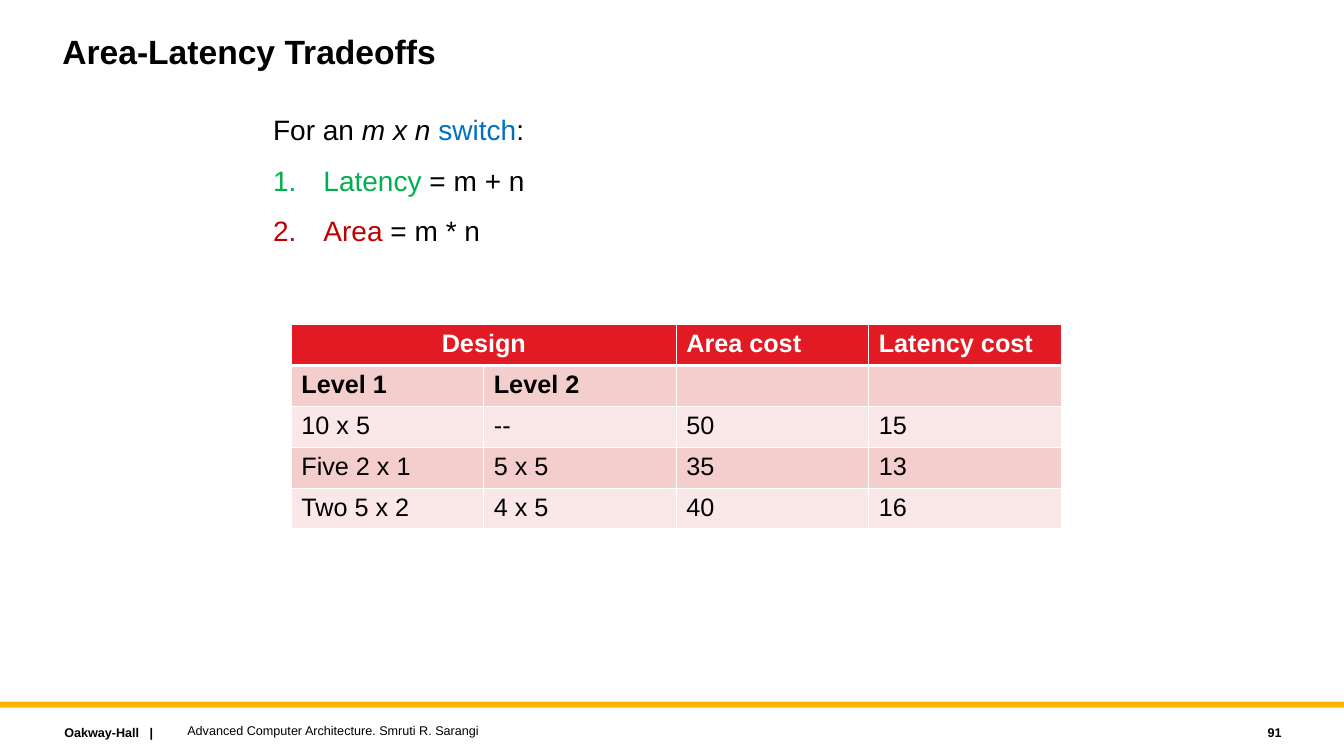
from lxml import etree
from pptx import Presentation
from pptx.dml.color import RGBColor
from pptx.enum.shapes import MSO_SHAPE
from pptx.enum.text import MSO_ANCHOR, PP_ALIGN
from pptx.oxml.ns import qn
from pptx.util import Cm, Pt

RECT = MSO_SHAPE.RECTANGLE
TOP, MIDDLE = MSO_ANCHOR.TOP, MSO_ANCHOR.MIDDLE
LEFT, CENTER, RIGHT = PP_ALIGN.LEFT, PP_ALIGN.CENTER, PP_ALIGN.RIGHT
BLACK, WHITE = "000000", "FFFFFF"


def paint(item, code):
    item.solid()
    item.fore_color.rgb = RGBColor.from_string(code)


def write(para, text, size, code=BLACK, **form):
    run = para.add_run()
    run.text = text
    paint(run.font.fill, code)
    for key, value in {"name": "Arial", "size": Pt(size), **form}.items():
        setattr(run.font, key, value)


deck = Presentation()
deck.slide_width, deck.slide_height = Cm(33.86), Cm(19.05)
slide = deck.slides.add_slide(deck.slide_layouts[6])
shapes = slide.shapes

bar = shapes.add_shape(RECT, 0, Cm(17.68), deck.slide_width, Cm(0.15))
bar.shadow.inherit = False
paint(bar.fill, "FFB600")
bar.line.fill.background()

plain, green, red = BLACK, "00B050", "C00000"
boxes = [
    ((1.37, 18.14, 5.77, 0.64), TOP, LEFT,
     [[("Oakway-Hall   |", 9, plain, {"bold": True})]]),
    ((1.32, 0.76, 25.4, 2.29), TOP, LEFT,
     [[("Area-Latency Tradeoffs", 24, plain, {"bold": True})]]),
    ((6.63, 2.72, 19.05, 4.34), TOP, LEFT,
     [[("For an ", 20, plain, {}), ("m x n ", 20, plain, {"italic": True}),
       ("switch", 20, "0070C0", {}), (":", 20, plain, {})],
      [("Latency", 20, green, {}), (" = m + n", 20, plain, {})],
      [("Area", 20, red, {}), (" = m * n", 20, plain, {})]]),
    ((4.47, 18.08, 20.32, 0.64), MIDDLE, LEFT,
     [[("Advanced Computer Architecture. Smruti R. Sarangi", 9, plain, {})]]),
    ((28.98, 18.14, 3.56, 0.64), MIDDLE, RIGHT,
     [[("91", 9, plain, {"bold": True})]]),
]
for place, anchor, align, lines in boxes:
    frame = shapes.add_textbox(*map(Cm, place)).text_frame
    frame.word_wrap = True
    frame.vertical_anchor = anchor
    for row, runs in enumerate(lines):
        para = frame.add_paragraph() if row else frame.paragraphs[0]
        para.alignment = align
        if row:
            props = para._p.get_or_add_pPr()
            props.set("marL", str(Cm(1.27)))
            props.set("indent", str(-Cm(1.27)))
            etree.SubElement(props, qn("a:buAutoNum"), type="arabicPeriod")
            para.space_before = Pt(12)
        for text, size, code, form in runs:
            write(para, text, size, code, **form)
        if runs[0][1] == 24:
            para.line_spacing = 0.9

data = [
    ["Design", "", "Area cost", "Latency cost"],
    ["Level 1", "Level 2", "", ""],
    ["10 x 5", "--", "50", "15"],
    ["Five 2 x 1", "5 x 5", "35", "13"],
    ["Two 5 x 2", "4 x 5", "40", "16"],
]
high, wide = 1.03, 4.85
grid = shapes.add_table(len(data), 4, Cm(7.34), Cm(8.18),
                        Cm(4 * wide), Cm(len(data) * high)).table
for col in grid.columns:
    col.width = Cm(wide)
for row, words in enumerate(data):
    grid.rows[row].height = Cm(high)
    back = "E21A23" if row == 0 else ("FAE8E8", "F4CDCD")[row % 2]
    for col, text in enumerate(words):
        cell = grid.cell(row, col)
        props = cell._tc.get_or_add_tcPr()
        for side in "LRTB":
            thick = (row, side) in [(0, "B"), (1, "T")]
            edge = etree.SubElement(props, qn("a:ln" + side),
                                    w=str(Pt(3 if thick else 1)))
            fill = etree.SubElement(edge, qn("a:solidFill"))
            etree.SubElement(fill, qn("a:srgbClr"), val=WHITE)
        paint(cell.fill, back)
        if text:
            para = cell.text_frame.paragraphs[0]
            para.alignment = CENTER if text == "Design" else LEFT
            write(para, text, 18, BLACK if row else WHITE, bold=row < 2)
grid.cell(0, 0).merge(grid.cell(0, 1))

deck.save("out.pptx")
